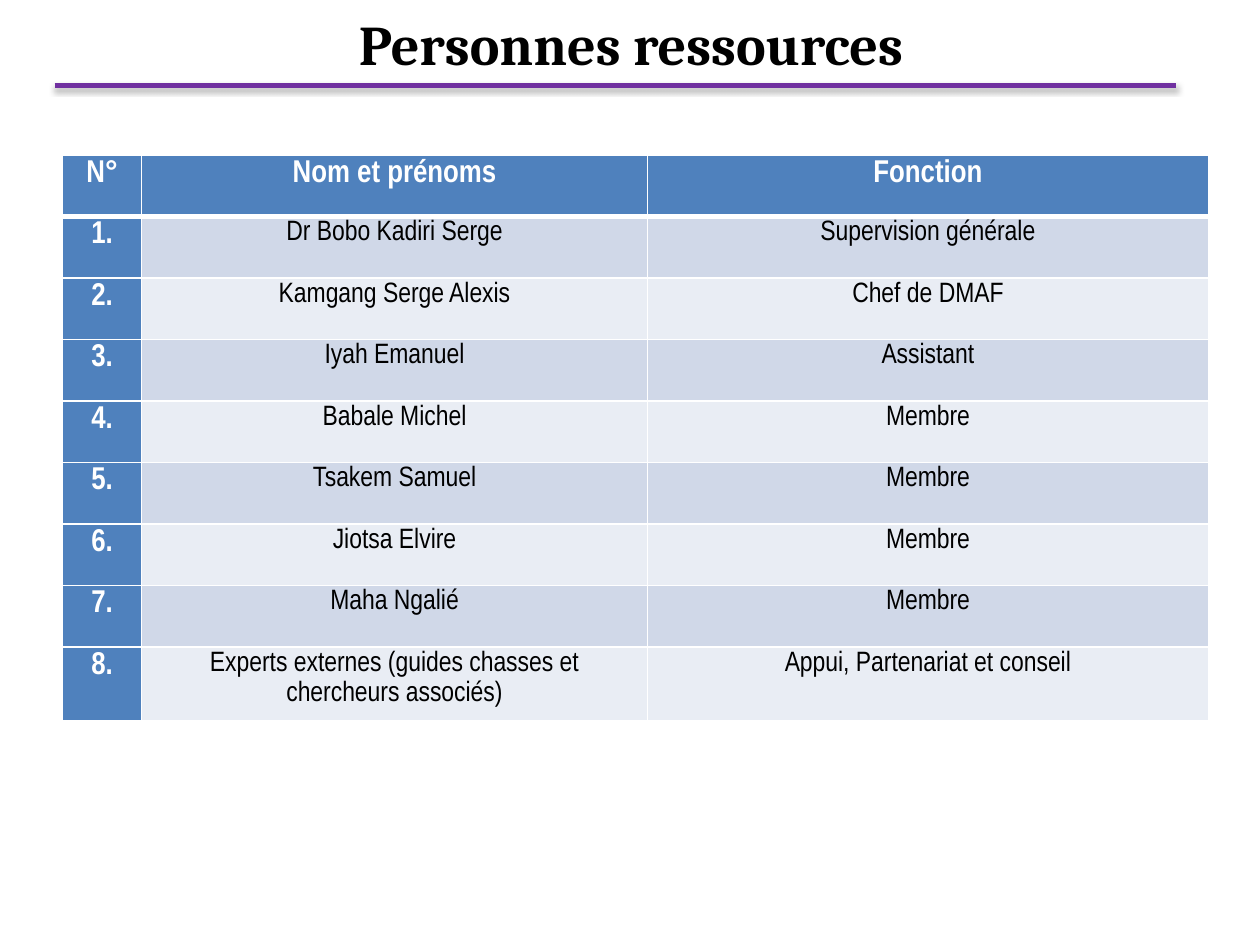
"""Build the slide listing the resource persons and their roles."""
from lxml.etree import SubElement
from pptx import Presentation
from pptx.dml.color import RGBColor
from pptx.enum.shapes import MSO_CONNECTOR
from pptx.enum.text import MSO_ANCHOR, PP_ALIGN
from pptx.oxml.ns import qn
from pptx.util import Pt

BLACK = RGBColor(0x00, 0x00, 0x00)
WHITE = RGBColor(0xFF, 0xFF, 0xFF)
PURPLE = RGBColor(0x70, 0x30, 0xA0)
BLUE = RGBColor(0x4F, 0x81, 0xBD)
BAND_DARK = RGBColor(0xD0, 0xD8, 0xE8)
BAND_LIGHT = RGBColor(0xE9, 0xED, 0xF4)

TITLE_FONT = {"name": "Cambria", "size": Pt(32), "bold": True, "color": BLACK}
HEAD_FONT = {"name": "Arial Narrow", "size": Pt(18), "bold": True, "color": WHITE}
BODY_FONT = {"name": "Arial Narrow", "size": Pt(16), "bold": False, "color": BLACK}
CELL_FORMAT = {"margin_left": Pt(5), "margin_right": Pt(5),
               "margin_top": 0, "margin_bottom": 0,
               "vertical_anchor": MSO_ANCHOR.TOP}
CELL_PARAGRAPH = {"alignment": PP_ALIGN.CENTER, "line_spacing": 1.15,
                  "space_after": Pt(10)}

COL_WIDTHS = (45.4, 289, 320.6)
ROW_HEIGHT = 35.15
LAST_ROW_HEIGHT = 41.8
HEADINGS = ("N°", "Nom et prénoms", "Fonction")
PEOPLE = (
    ("Dr Bobo Kadiri Serge", "Supervision générale"),
    ("Kamgang Serge Alexis", "Chef de DMAF"),
    ("Iyah Emanuel", "Assistant"),
    ("Babale Michel", "Membre"),
    ("Tsakem Samuel", "Membre"),
    ("Jiotsa Elvire", "Membre"),
    ("Maha Ngalié", "Membre"),
    ("Experts externes (guides chasses et chercheurs associés)",
     "Appui, Partenariat et conseil"),
)


def set_attrs(obj, values):
    """Set each named attribute of an object."""
    for name, value in values.items():
        setattr(obj, name, value)


def write(p, text, font):
    """Add one formatted run to a paragraph."""
    r = p.add_run()
    r.text = text
    for name, value in font.items():
        if name == "color":
            r.font.color.rgb = value
        else:
            setattr(r.font, name, value)


def add_title(s, text):
    """Place and format the title placeholder."""
    sp = s.shapes.title
    set_attrs(sp, {"left": Pt(36.7), "top": Pt(0.7),
                   "width": Pt(648), "height": Pt(48.2)})
    tf = sp.text_frame
    tf.vertical_anchor = MSO_ANCHOR.MIDDLE
    p = tf.paragraphs[0]
    p.alignment = PP_ALIGN.CENTER
    write(p, text, TITLE_FONT)


def add_rule(s, left, right, y):
    """Draw the purple rule with its soft shadow."""
    ln = s.shapes.add_connector(MSO_CONNECTOR.STRAIGHT,
                                Pt(left), Pt(y), Pt(right), Pt(y))
    ln.line.color.rgb = PURPLE
    ln.line.width = Pt(3)
    effects = SubElement(ln._element.spPr, qn("a:effectLst"))
    shadow = SubElement(effects, qn("a:outerShdw"), blurRad=str(Pt(3.1)),
                        dist=str(Pt(1.8)), dir="5400000", rotWithShape="0")
    color = SubElement(shadow, qn("a:srgbClr"), val=str(BLACK))
    SubElement(color, qn("a:alpha"), val="35000")


def add_borders(cell, bottom, top):
    """Give a cell white borders, with its own bottom and top widths."""
    tc_pr = cell._tc.get_or_add_tcPr()
    for tag, width in (("lnL", 1), ("lnR", 1), ("lnT", top), ("lnB", bottom)):
        ln = SubElement(tc_pr, qn(f"a:{tag}"), w=str(Pt(width)))
        fill = SubElement(ln, qn("a:solidFill"))
        SubElement(fill, qn("a:srgbClr"), val=str(WHITE))


def fill_cell(cell, text, row, col):
    """Write and format one table cell."""
    is_head = row == 0 or col == 0
    set_attrs(cell, CELL_FORMAT)
    add_borders(cell, bottom=3 if row == 0 else 1, top=3 if row == 1 else 1)
    cell.fill.solid()
    band = BAND_DARK if row % 2 else BAND_LIGHT
    cell.fill.fore_color.rgb = BLUE if is_head else band
    p = cell.text_frame.paragraphs[0]
    set_attrs(p, CELL_PARAGRAPH)
    write(p, text, HEAD_FONT if is_head else BODY_FONT)


def add_people_table(s, left, top):
    """Add the numbered table of people."""
    rows = [HEADINGS] + [(f"{n}.", *person) for n, person in enumerate(PEOPLE, 1)]
    heights = [ROW_HEIGHT] * len(PEOPLE) + [LAST_ROW_HEIGHT]
    table = s.shapes.add_table(len(rows), len(COL_WIDTHS), Pt(left), Pt(top),
                               Pt(sum(COL_WIDTHS)), Pt(sum(heights))).table
    table.first_col = True
    for column, width in zip(table.columns, COL_WIDTHS):
        column.width = Pt(width)
    for i, (values, height) in enumerate(zip(rows, heights)):
        table.rows[i].height = Pt(height)
        for j, text in enumerate(values):
            fill_cell(table.cell(i, j), text, i, j)


def main():
    """Create and save the presentation."""
    prs = Presentation()
    set_attrs(prs, {"slide_width": Pt(720), "slide_height": Pt(540)})
    s = prs.slides.add_slide(prs.slide_layouts[5])
    add_title(s, "Personnes ressources")
    add_rule(s, 31.2, 672, 48.8)
    add_people_table(s, 35.6, 88.6)
    prs.save("out.pptx")


if __name__ == "__main__":
    main()
